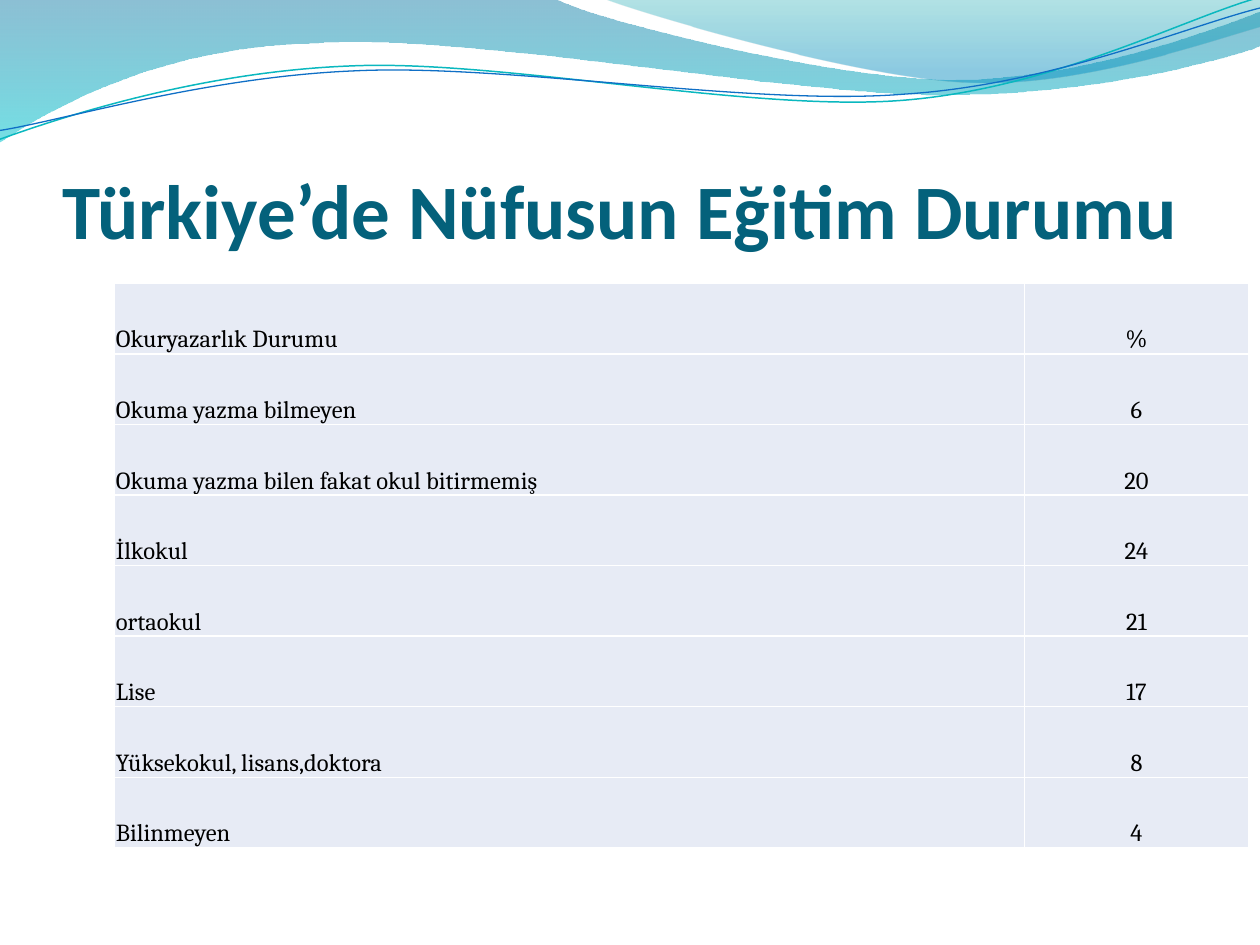
from dataclasses import dataclass

import pptx
import pptx.dml.color
import pptx.enum.text
import pptx.oxml
import pptx.oxml.ns
import pptx.util

RGBColor = pptx.dml.color.RGBColor
Inches = pptx.util.Inches
Point = tuple[float, float]
Curve = tuple[Point, Point, Point]

BLACK = RGBColor(0x00, 0x00, 0x00)
WHITE = RGBColor(0xFF, 0xFF, 0xFF)
TITLE_TEAL = RGBColor(0x04, 0x61, 0x7B)
CELL_FILL = RGBColor(0xE7, 0xEB, 0xF5)
DEEP_BLUE = RGBColor(0x00, 0x74, 0xA1)
AQUA = RGBColor(0x00, 0xC6, 0xCF)
SEA_GREEN = RGBColor(0x00, 0xA1, 0xA9)
SKY_BLUE = RGBColor(0x00, 0x8B, 0xBF)
LINE_TEAL = RGBColor(0x0A, 0xB8, 0xBF)
LINE_BLUE = RGBColor(0x0F, 0x6F, 0xC6)


@dataclass(frozen=True)
class Stop:
    position: float
    color: RGBColor
    opacity: int


@dataclass(frozen=True)
class Band:
    """A filled wave; each segment is a straight point or a cubic curve."""
    start: Point
    segments: tuple[Point | Curve, ...]
    stops: tuple[Stop, Stop]


@dataclass(frozen=True)
class Strand:
    """A thin open wave line, given before it is tilted."""
    start: Point
    curves: tuple[Curve, ...]
    color: RGBColor
    width: float


BANDS = (
    Band((0, 0), (
        (4.4, -0.01),
        ((4.76, 0.17), (6.64, 0.63), (7.58, 0.63)),
        ((8.53, 0.63), (9.58, 0.26), (10, 0.09)),
        (10.01, 0.36),
        ((9.83, 0.44), (8.7, 0.76), (7.46, 0.75)),
        ((6.22, 0.75), (3.82, 0.28), (2.57, 0.34)),
        ((1.29, 0.36), (0.46, 0.83), (-0.01, 1.13)),
        (0, 0),
    ), (Stop(0, DEEP_BLUE, 45), Stop(1, AQUA, 55))),
    Band((4.79, -0.01), (
        ((5.09, 0.11), (6.82, 0.62), (7.69, 0.65)),
        ((8.56, 0.69), (9.61, 0.32), (10, 0.21)),
        (10, 0),
        (4.79, -0.01),
    ), (Stop(0, SEA_GREEN, 30), Stop(0.8, SKY_BLUE, 45))),
)

STRAND_TILT = 357.3
STRANDS = (
    Strand((-0.02, 0.87), (
        ((0.47, 0.72), (1.58, 0.41), (2.78, 0.42)),
        ((3.96, 0.42), (5.91, 0.93), (7.12, 0.9)),
        ((8.32, 0.87), (9.4, 0.36), (10, 0.22)),
    ), LINE_TEAL, 0.85),
    Strand((-0.02, 0.8), (
        ((0.46, 0.75), (1.64, 0.45), (2.83, 0.46)),
        ((4.03, 0.46), (5.96, 0.89), (7.16, 0.85)),
        ((8.35, 0.83), (9.42, 0.42), (10.02, 0.3)),
    ), LINE_BLUE, 0.75),
)

TABLE_ROWS = (
    ("Okuryazarlık Durumu", "%"),
    ("Okuma yazma bilmeyen", "6"),
    ("Okuma yazma bilen fakat okul bitirmemiş", "20"),
    ("İlkokul", "24"),
    ("ortaokul", "21"),
    ("Lise", "17"),
    ("Yüksekokul, lisans,doktora", "8"),
    ("Bilinmeyen", "4"),
)
COLUMN_WIDTHS = (7.22, 1.78)
ROW_HEIGHT = 0.56


def is_curve(segment: Point | Curve) -> bool:
    return isinstance(segment[0], tuple)


def add_wave(slide, start: Point, segments: tuple, close: bool):
    """Lay out all points as lines, then join each curve's three into one cubic."""
    points = [start]
    for segment in segments:
        points.extend(segment if is_curve(segment) else [segment])
    lengths = [(Inches(x), Inches(y)) for x, y in points]
    builder = slide.shapes.build_freeform(*lengths[0])
    builder.add_line_segments(lengths[1:], close=close)
    shape = builder.convert_to_shape()
    shape.shadow.inherit = False

    lines = iter(shape.element.spPr.findall(".//" + pptx.oxml.ns.qn("a:lnTo")))
    for segment in segments:
        line = next(lines)
        if is_curve(segment):
            cubic = pptx.oxml.parse_xml(f'<a:cubicBezTo {pptx.oxml.ns.nsdecls("a")}/>')
            line.addprevious(cubic)
            for part in (line, next(lines), next(lines)):
                cubic.append(part[0])
                part.getparent().remove(part)
    return shape


def add_band(slide, band: Band) -> None:
    shape = add_wave(slide, band.start, band.segments, close=True)
    shape.line.fill.background()
    shape.fill.gradient()
    shape.fill.gradient_angle = 270
    for gradient_stop, stop in zip(shape.fill.gradient_stops, band.stops):
        gradient_stop.position = stop.position
        gradient_stop.color.rgb = stop.color
    colors = shape.element.spPr.findall(".//" + pptx.oxml.ns.qn("a:srgbClr"))
    for color, stop in zip(colors, band.stops):
        color.append(pptx.oxml.parse_xml(
            f'<a:alpha {pptx.oxml.ns.nsdecls("a")} val="{stop.opacity * 1000}"/>'))


def add_strand(slide, strand: Strand) -> None:
    shape = add_wave(slide, strand.start, strand.curves, close=False)
    shape.rotation = STRAND_TILT
    shape.fill.background()
    shape.line.color.rgb = strand.color
    shape.line.width = pptx.util.Pt(strand.width)


def add_run(paragraph, text: str, font: str, size: int, color: RGBColor):
    run = paragraph.add_run()
    run.text = text
    run.font.name = font
    run.font.size = pptx.util.Pt(size)
    run.font.color.rgb = color
    return run


def add_title(slide, text: str) -> None:
    box = slide.shapes.add_textbox(Inches(0.5), Inches(0.77), Inches(9), Inches(1.25))
    frame = box.text_frame
    frame.word_wrap = True
    frame.vertical_anchor = pptx.enum.text.MSO_ANCHOR.BOTTOM
    frame.margin_left = frame.margin_right = frame.margin_bottom = 0
    frame.margin_top = Inches(0.05)
    add_run(frame.paragraphs[0], text, "Calibri", 44, TITLE_TEAL).font.bold = True


def style_cell(cell) -> None:
    cell.vertical_anchor = pptx.enum.text.MSO_ANCHOR.BOTTOM
    cell.margin_left = cell.margin_right = cell.margin_top = Inches(0.01)
    cell.margin_bottom = 0
    properties = cell._tc.get_or_add_tcPr()
    for side in ("lnL", "lnR", "lnT", "lnB"):
        properties.append(pptx.oxml.parse_xml(
            f'<a:{side} {pptx.oxml.ns.nsdecls("a")} w="12700"><a:solidFill>'
            f'<a:srgbClr val="{WHITE}"/></a:solidFill></a:{side}>'))
    cell.fill.solid()
    cell.fill.fore_color.rgb = CELL_FILL


def add_education_table(slide) -> None:
    table = slide.shapes.add_table(
        len(TABLE_ROWS), len(COLUMN_WIDTHS), Inches(0.91), Inches(2.25),
        Inches(sum(COLUMN_WIDTHS)), Inches(ROW_HEIGHT * len(TABLE_ROWS))).table
    table.first_row = table.horz_banding = False
    for column, width in zip(table.columns, COLUMN_WIDTHS):
        column.width = Inches(width)
    alignments = (pptx.enum.text.PP_ALIGN.LEFT, pptx.enum.text.PP_ALIGN.CENTER)
    for row, texts in zip(table.rows, TABLE_ROWS):
        row.height = Inches(ROW_HEIGHT)
        for cell, text, alignment in zip(row.cells, texts, alignments):
            style_cell(cell)
            paragraph = cell.text_frame.paragraphs[0]
            paragraph.alignment = alignment
            add_run(paragraph, text, "Cambria", 14, BLACK)


def main() -> None:
    presentation = pptx.Presentation()
    presentation.slide_width, presentation.slide_height = Inches(10), Inches(7.5)
    slide = presentation.slides.add_slide(presentation.slide_layouts[6])
    # Wave decoration along the top
    for band in BANDS:
        add_band(slide, band)
    for strand in STRANDS:
        add_strand(slide, strand)
    # Content
    add_title(slide, "Türkiye’de Nüfusun Eğitim Durumu")
    add_education_table(slide)
    presentation.save("out.pptx")


if __name__ == "__main__":
    main()
